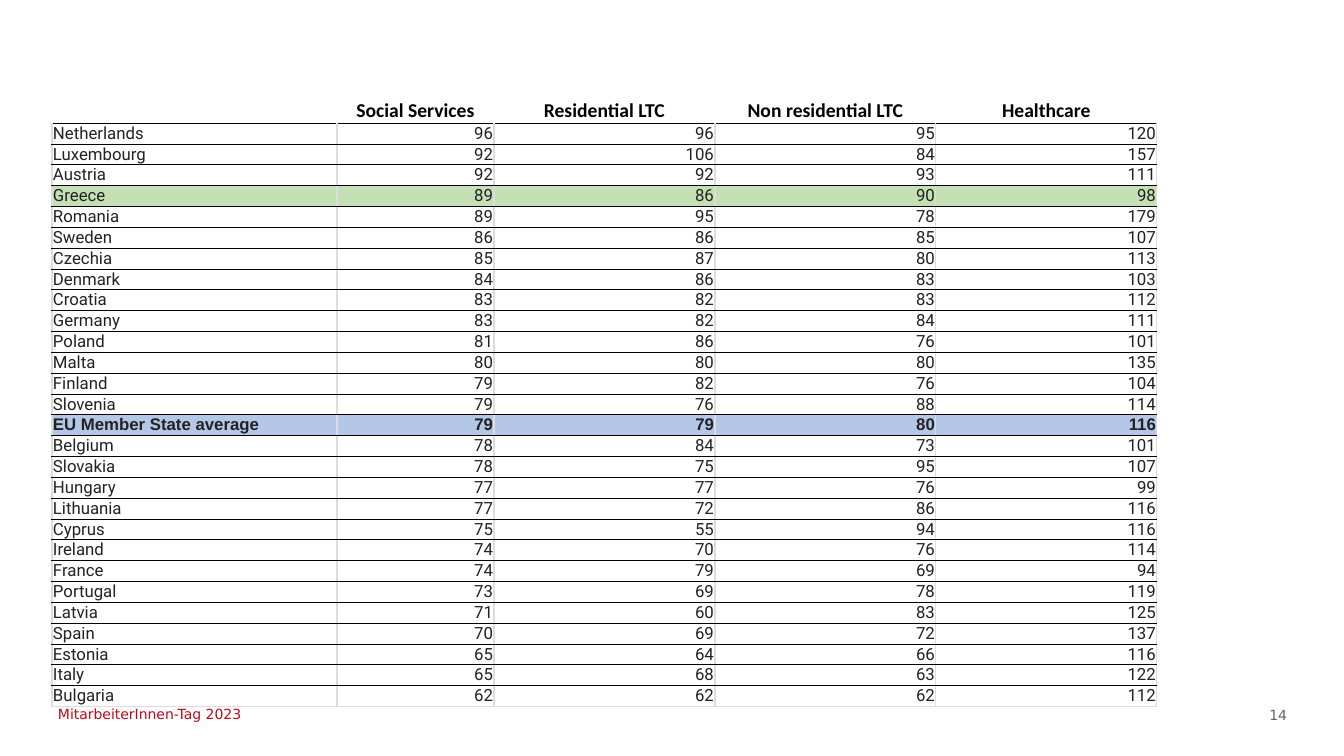
from lxml.etree import SubElement
from pptx import Presentation
from pptx.dml.color import RGBColor
from pptx.enum.text import MSO_ANCHOR, PP_ALIGN
from pptx.oxml.ns import qn
from pptx.util import Pt

PX = 914400 / 100.8

COLORS = {
    "black": "000000",
    "body": "222222",
    "grid": "DDDDDD",
    "greece": "C5E0B4",
    "average": "B4C7E7",
    "footer": "BC091B",
    "number": "646567",
}

HEADINGS = ("", "Social Services", "Residential LTC", "Non residential LTC", "Healthcare")
COUNTRIES = [
    ("Netherlands", 96, 96, 95, 120),
    ("Luxembourg", 92, 106, 84, 157),
    ("Austria", 92, 92, 93, 111),
    ("Greece", 89, 86, 90, 98),
    ("Romania", 89, 95, 78, 179),
    ("Sweden", 86, 86, 85, 107),
    ("Czechia", 85, 87, 80, 113),
    ("Denmark", 84, 86, 83, 103),
    ("Croatia", 83, 82, 83, 112),
    ("Germany", 83, 82, 84, 111),
    ("Poland", 81, 86, 76, 101),
    ("Malta", 80, 80, 80, 135),
    ("Finland", 79, 82, 76, 104),
    ("Slovenia", 79, 76, 88, 114),
    ("EU Member State average", 79, 79, 80, 116),
    ("Belgium", 78, 84, 73, 101),
    ("Slovakia", 78, 75, 95, 107),
    ("Hungary", 77, 77, 76, 99),
    ("Lithuania", 77, 72, 86, 116),
    ("Cyprus", 75, 55, 94, 116),
    ("Ireland", 74, 70, 76, 114),
    ("France", 74, 79, 69, 94),
    ("Portugal", 73, 69, 78, 119),
    ("Latvia", 71, 60, 83, 125),
    ("Spain", 70, 69, 72, 137),
    ("Estonia", 65, 64, 66, 116),
    ("Italy", 65, 68, 63, 122),
    ("Bulgaria", 62, 62, 62, 112),
]
COLUMN_WIDTHS = (285, 157, 221, 221, 221)
HEADER_HEIGHT = 31

HEADER_FONT = {"name": "Calibri", "size": Pt(14), "bold": True}
COUNTRY_FONT = {"name": "Roboto", "size": Pt(12), "bold": False}
AVERAGE_FONT = {"name": "Arial", "size": Pt(12), "bold": True}
FOOTER_FONT = {"name": "DejaVu Sans", "size": Pt(10)}

RULE = ("black", 0.5)
GRID = ("grid", 1)
HEADER_BORDERS = {"L": None, "R": None, "T": None, "B": RULE}
COUNTRY_BORDERS = {"L": GRID, "R": GRID, "T": RULE, "B": RULE}
LAST_BORDERS = {**COUNTRY_BORDERS, "B": GRID}


def emu(px):
    return round(px * PX)


def write(paragraph, text, align, font, color):
    paragraph.alignment = align
    run = paragraph.add_run()
    run.text = text
    for attribute, value in font.items():
        setattr(run.font, attribute, value)
    run.font.color.rgb = RGBColor.from_string(COLORS[color])


def set_borders(cell, borders):
    properties = cell._tc.get_or_add_tcPr()
    for side, border in borders.items():
        line = SubElement(properties, qn(f"a:ln{side}"))
        if border is None:
            line.set("w", "0")
            SubElement(line, qn("a:noFill"))
            continue
        color, width = border
        line.set("w", str(Pt(width)))
        fill = SubElement(line, qn("a:solidFill"))
        SubElement(fill, qn("a:srgbClr")).set("val", COLORS[color])


def format_cell(cell, anchor, borders, fill=None):
    # No vertical margins, so that the text fits the tight rows
    margins = {"margin_left": 1, "margin_right": 1, "margin_top": 0, "margin_bottom": 0}
    for attribute, px in margins.items():
        setattr(cell, attribute, emu(px))
    cell.vertical_anchor = anchor
    set_borders(cell, borders)
    if fill:
        cell.fill.solid()
        cell.fill.fore_color.rgb = RGBColor.from_string(COLORS[fill])
    else:
        cell.fill.background()


def add_country_table(slide, left, top, width, height):
    frame = slide.shapes.add_table(len(COUNTRIES) + 1, len(HEADINGS),
                                   *map(emu, (left, top, width, height)))
    table = frame.table
    table.first_row = table.horz_banding = False
    for column, column_width in zip(table.columns, COLUMN_WIDTHS):
        column.width = emu(column_width)
    for row in table.rows:
        row.height = emu((height - HEADER_HEIGHT) / len(COUNTRIES))
    table.rows[0].height = emu(HEADER_HEIGHT)

    # Column headings
    for cell, heading in zip(table.rows[0].cells, HEADINGS):
        format_cell(cell, MSO_ANCHOR.BOTTOM, HEADER_BORDERS)
        if heading:
            write(cell.text_frame.paragraphs[0], heading, PP_ALIGN.CENTER,
                  HEADER_FONT, "black")

    # Countries, with Greece and the average highlighted
    highlights = {"Greece": "greece", "EU Member State average": "average"}
    for number, values in enumerate(COUNTRIES, start=1):
        fill = highlights.get(values[0])
        font = AVERAGE_FONT if fill == "average" else COUNTRY_FONT
        borders = LAST_BORDERS if number == len(COUNTRIES) else COUNTRY_BORDERS
        for index, value in enumerate(values):
            cell = table.cell(number, index)
            format_cell(cell, MSO_ANCHOR.MIDDLE, borders, fill)
            align = PP_ALIGN.RIGHT if index else PP_ALIGN.LEFT
            write(cell.text_frame.paragraphs[0], str(value), align, font, "body")


def add_footer_text(slide, left, top, width, height, text, align, color):
    box = slide.shapes.add_textbox(*map(emu, (left, top, width, height)))
    frame = box.text_frame
    frame.word_wrap = True
    for side in ("left", "right", "top", "bottom"):
        setattr(frame, f"margin_{side}", 0)
    write(frame.paragraphs[0], text, align, FOOTER_FONT, color)


def add_footer(slide, left, top, width, height):
    add_footer_text(slide, left + width - 498, top + 1, 498, height,
                    "14", PP_ALIGN.RIGHT, "number")
    add_footer_text(slide, left, top, 519, height,
                    "MitarbeiterInnen-Tag 2023", PP_ALIGN.LEFT, "footer")


def main():
    presentation = Presentation()
    presentation.slide_width = emu(1344)
    presentation.slide_height = emu(756)
    slide = presentation.slides.add_slide(presentation.slide_layouts[6])
    add_footer(slide, 58, 706, 1229, 17)
    add_country_table(slide, 52, 92, sum(COLUMN_WIDTHS), 615)
    presentation.save("out.pptx")


if __name__ == "__main__":
    main()
